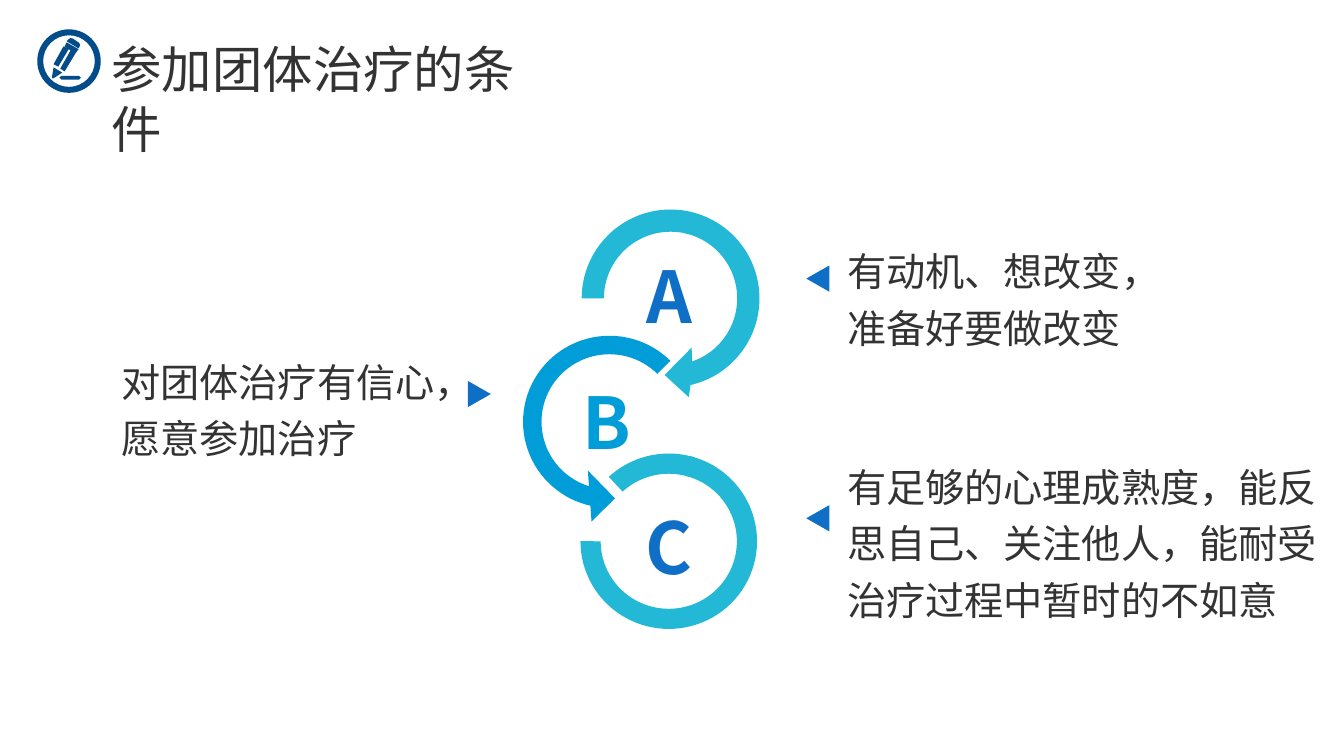
import math
from dataclasses import dataclass
from typing import NamedTuple
import lxml.etree
import pptx
import pptx.util
import pptx.dml.color
import pptx.enum.shapes
import pptx.enum.text
import pptx.oxml
import pptx.oxml.ns

Cm = pptx.util.Cm
Kind = pptx.enum.shapes.MSO_SHAPE
qn = pptx.oxml.ns.qn


class Node(NamedTuple):
    x: float
    y: float
    bend: bool = False  # first of the three points of a curve


@dataclass(frozen=True)
class Theme:
    font: str = "Noto Sans CJK SC"
    ink: str = "333333"
    navy: str = "024C89"
    blue: str = "0F6FC6"
    sky: str = "009DD9"
    teal: str = "23B9D6"
    title: float = 36
    body: float = 28
    letter: float = 51


@dataclass(frozen=True)
class Box:
    left: float
    top: float
    width: float
    height: float

    def lengths(self) -> list[pptx.util.Length]:
        return [Cm(v) for v in (self.left, self.top, self.width, self.height)]


@dataclass(frozen=True)
class Label:
    text: str
    box: Box
    size: float
    color: str
    bold: bool = False
    wrap: bool = True
    spacing: float = 1.0
    inset: tuple[float, float] = (0.25, 0.13)


@dataclass(frozen=True)
class Preset:
    kind: Kind
    box: Box
    color: str
    turn: float = 0
    adjust: tuple[float, ...] = ()


@dataclass(frozen=True)
class Outline:
    loops: list[list[Node]]
    color: str


def arc(mid: Node, radius: float, *stops: float) -> list[Node]:
    """Curves through the stops of a circle; degrees run clockwise."""
    def spot(turn: float, pull: float = 0, bend: bool = False) -> Node:
        cos, sin = math.cos(turn), math.sin(turn)
        return Node(mid.x + radius * (cos - pull * sin),
                    mid.y + radius * (sin + pull * cos), bend)

    turns = [math.radians(stop) for stop in stops]
    nodes = [spot(turns[0])]
    for start, end in zip(turns, turns[1:]):
        pull = 4 / 3 * math.tan((end - start) / 4)
        nodes += [spot(start, pull, True), spot(end, -pull), spot(end)]
    return nodes


def paint(shape, color: str) -> None:
    shape.shadow.inherit = False
    shape.fill.solid()
    shape.fill.fore_color.rgb = pptx.dml.color.RGBColor.from_string(color)
    shape.line.fill.background()


def add_label(slide, label: Label, theme: Theme) -> None:
    frame = slide.shapes.add_textbox(*label.box.lengths()).text_frame
    frame.word_wrap = label.wrap
    frame.auto_size = pptx.enum.text.MSO_AUTO_SIZE.SHAPE_TO_FIT_TEXT
    frame.margin_left = frame.margin_right = Cm(label.inset[0])
    frame.margin_top = frame.margin_bottom = Cm(label.inset[1])
    para = frame.paragraphs[0]
    para.text = label.text
    para.line_spacing = label.spacing
    font = para.font
    font.name = theme.font
    font.size = pptx.util.Pt(label.size)
    font.bold = label.bold
    font.color.rgb = pptx.dml.color.RGBColor.from_string(label.color)
    # East Asian text takes its own font entry
    east = pptx.oxml.parse_xml(
        f'<a:ea {pptx.oxml.ns.nsdecls("a")} typeface="{theme.font}"/>')
    para._p.pPr.find(qn("a:defRPr")).append(east)


def add_preset(slide, item: Preset) -> None:
    shape = slide.shapes.add_shape(item.kind, *item.box.lengths())
    shape.rotation = item.turn
    for i, value in enumerate(item.adjust):
        shape.adjustments[i] = value
    paint(shape, item.color)


def add_outline(slide, item: Outline) -> None:
    loops = [[(Cm(n.x), Cm(n.y)) for n in loop] for loop in item.loops]
    pen = slide.shapes.build_freeform(*loops[0][0])
    for i, loop in enumerate(loops):
        if i:
            pen.move_to(*loop[0])
        pen.add_line_segments(loop[1:], close=True)
    shape = pen.convert_to_shape()
    # Join each three points of a curve into one cubic segment
    lines = list(shape._element.iter(qn("a:lnTo")))
    nodes = [node for loop in item.loops for node in loop[1:]]
    for i, node in enumerate(nodes):
        if node.bend:
            curve = lxml.etree.Element(qn("a:cubicBezTo"))
            lines[i].addprevious(curve)
            for line in lines[i:i + 3]:
                curve.append(line[0])
                line.getparent().remove(line)
    paint(shape, item.color)


def main() -> None:
    theme = Theme()
    deck = pptx.Presentation()
    deck.slide_width, deck.slide_height = Cm(33.87), Cm(19.05)
    slide = deck.slides.add_slide(deck.slide_layouts[6])

    # Title with pencil badge
    add_label(slide, Label("参加团体治疗的条件", Box(2.48, 0.78, 12.05, 1.88),
                           theme.title, theme.ink, inset=(0.33, 0.18)), theme)
    hub = Node(1.74, 1.54)
    dash = (arc(Node(1.99, 1.96), 0.05, -90, 0, 90)
            + arc(Node(1.55, 1.96), 0.05, 90, 180, 270))
    pencil = [
        [(1.52, 1.73), (1.78, 1.27), (1.9, 1.35), (1.63, 1.8)],
        [(1.35, 1.62), (1.6, 1.17), (1.73, 1.24), (1.47, 1.68)],
        [(1.31, 1.95), (1.35, 1.7), (1.57, 1.83), (1.37, 1.96), (1.33, 1.98)],
        [(1.68, 1.07), (1.98, 1.24), (1.9, 1.35), (1.63, 1.17)],
        [(1.73, 0.99), (1.77, 0.96), (1.83, 0.97), (1.98, 1.07),
         (2.02, 1.12), (2.01, 1.17), (1.98, 1.22), (1.68, 1.04)],
    ]
    parts = [[Node(*spot) for spot in part] for part in pencil]
    rings = [arc(hub, radius, -90, 0, 90, 180, 270) for radius in (0.8, 0.65)]
    add_outline(slide, Outline([dash, *parts, *rings], theme.navy))

    # Conditions, each with a pointer
    notes = [
        ("有动机、想改变，准备好要做改变", Box(21.1, 5.87, 9.07, 3.12),
         (20.28, 6.73), 270),
        ("有足够的心理成熟度，能反思自己、关注他人，能耐受治疗过程中暂时的不如意",
         Box(21.1, 11.3, 12.62, 4.55), (20.28, 12.77), 270),
        ("对团体治疗有信心，愿意参加治疗", Box(2.81, 8.66, 8.99, 3.12),
         (11.75, 9.64), 90),
    ]
    for text, box, spot, turn in notes:
        add_preset(slide, Preset(Kind.ISOSCELES_TRIANGLE,
                                 Box(*spot, 0.66, 0.58), theme.blue, turn))
        add_label(slide, Label(text, box, theme.body, theme.ink, spacing=1.2),
                  theme)

    # Loop B, then loop C in two arcs
    add_preset(slide, Preset(Kind.LEFT_CIRCULAR_ARROW,
                             Box(12.77, 8.05, 5.18, 5.16), theme.sky,
                             adjust=(0.09, 11.42, 62.94, 189, 0.125)))
    for start, end in ((136.24, 172.28), (170.85, 108)):
        add_preset(slide, Preset(Kind.BLOCK_ARC, Box(14.63, 11.43, 4.45, 4.42),
                                 theme.teal, adjust=(start, end, 0.115)))

    # Loop A: arrow half, then tail
    mid, outer, inner = Node(16.9, 7.52), 2.24, 1.68
    tip = [Node(17.36, 10.01), Node(16.75, 9.45), Node(17.43, 8.76)]
    arrow = (arc(mid, outer, -77, 0, 77) + tip
             + arc(mid, inner, 71, 0, -77))
    tail = arc(mid, outer, 180, 270, 284) + arc(mid, inner, 284, 270, 180)
    for loop in (arrow, tail):
        add_outline(slide, Outline([loop], theme.teal))

    # Letters
    for text, left, top, width, color in (
            ("A", 16.05, 6.22, 1.88, theme.blue),
            ("B", 14.43, 9.4, 1.75, theme.sky),
            ("C", 16.02, 12.55, 1.73, theme.blue)):
        add_label(slide, Label(text, Box(left, top, width, 2.44), theme.letter,
                               color, bold=True, wrap=False), theme)

    deck.save("out.pptx")


if __name__ == "__main__":
    main()
